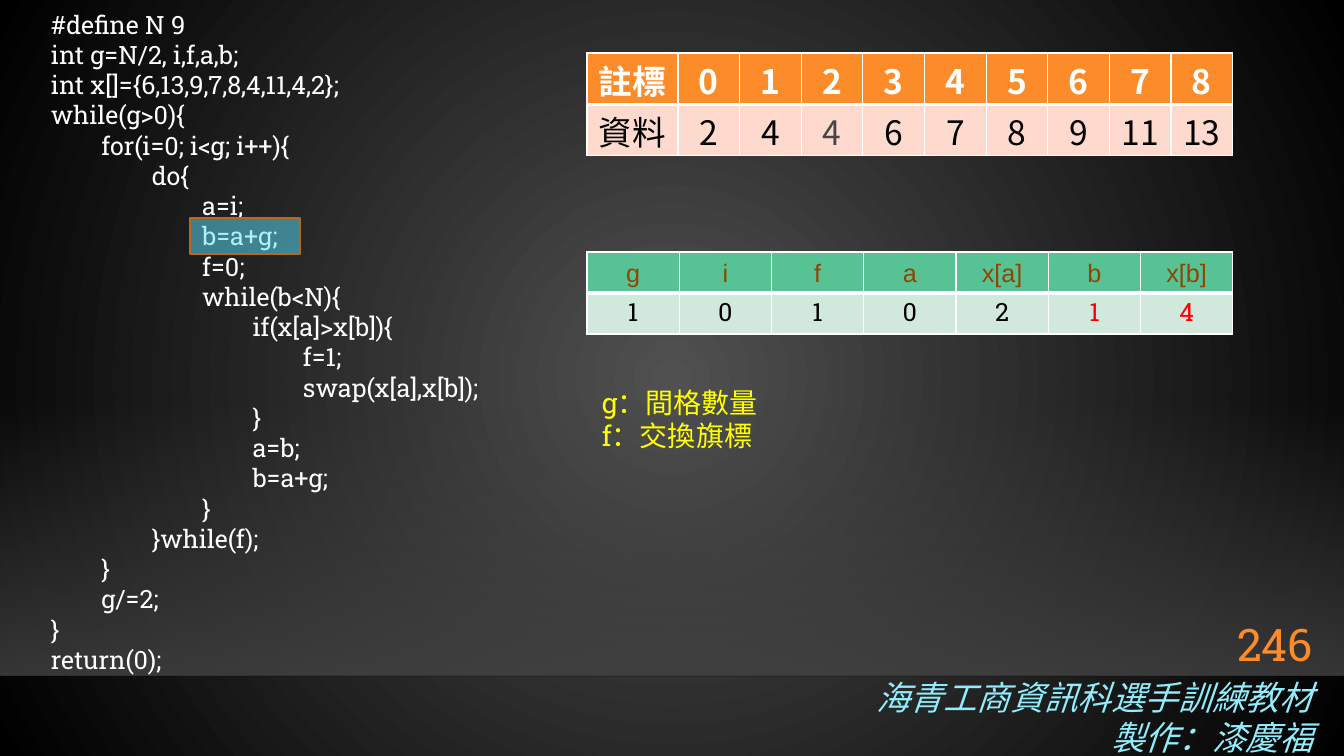
import pptx
import pptx.util
import pptx.dml.color
import pptx.enum.shapes
import pptx.enum.text
import pptx.oxml
import pptx.oxml.ns

SLAB = "Roboto Slab"
HAN = "Noto Sans CJK SC"
SANS = "Arial"
WHITE, BLACK, RED, ORANGE = "FFFFFF", "000000", "FF0000", "FB8C29"
ALIGN = pptx.enum.text.PP_ALIGN
ANCHOR = pptx.enum.text.MSO_ANCHOR
QN = pptx.oxml.ns.qn


def px(count):
    return pptx.util.Emu(round(count * 914400 / 100.8))


def color(code):
    return pptx.dml.color.RGBColor.from_string(code)


def element(tag, inner="", **attributes):
    listed = " ".join(f'{key}="{value}"' for key, value in attributes.items())
    return pptx.oxml.parse_xml(
        f'<a:{tag} {pptx.oxml.ns.nsdecls("a")} {listed}>{inner}</a:{tag}>')


def set_alpha(parent, percent):
    parent.find(".//" + QN("a:srgbClr")).append(element("alpha", val=percent * 1000))


def gradient(stops, direction):
    listed = "".join(
        f'<a:gs pos="{position * 1000}"><a:srgbClr val="{code}">'
        f'<a:alpha val="{alpha * 1000}"/></a:srgbClr></a:gs>'
        for position, code, alpha in stops)
    return element("gradFill", f"<a:gsLst>{listed}</a:gsLst>{direction}", rotWithShape=1)


class Page:
    def __init__(self, deck):
        self.slide = deck.slides.add_slide(deck.slide_layouts[6])
        self.shapes = self.slide.shapes

    def put_gradient(self, owner, stops, direction):
        holder = owner.find(".//" + QN("a:gradFill"))
        holder.getparent().replace(holder, gradient(stops, direction))

    def backdrop(self, center, edge):
        self.slide.background.fill.gradient()
        self.put_gradient(
            self.slide.element, [(0, center, 100), (100, edge, 100)],
            '<a:path path="circle"><a:fillToRect l="50000" t="50000" r="50000" b="50000"/></a:path>')

    def rectangle(self, box):
        shape = self.shapes.add_shape(
            pptx.enum.shapes.MSO_SHAPE.RECTANGLE, *map(px, box))
        shape.shadow.inherit = False
        return shape

    def floor(self, box, code):
        shape = self.rectangle(box)
        shape.line.fill.background()
        shape.fill.gradient()
        self.put_gradient(shape.element, [(0, code, 0), (100, code, 80)],
                          '<a:lin ang="5400000" scaled="0"/>')

    def highlight(self, box, fill, outline):
        shape = self.rectangle(box)
        shape.fill.solid()
        shape.fill.fore_color.rgb = color(fill)
        set_alpha(shape.element.spPr.find(QN("a:solidFill")), 50)
        shape.line.color.rgb = color(outline)
        shape.line.width = pptx.util.Pt(1.25)

    def horizon(self, y, width, code):
        line = self.shapes.add_connector(
            pptx.enum.shapes.MSO_CONNECTOR.STRAIGHT, 0, px(y), px(width), px(y))
        line.line.color.rgb = color(code)
        line.line.width = pptx.util.Pt(1)
        set_alpha(line.element.spPr, 20)
        line.element.spPr.append(element("effectLst"))

    def add_text(self, paragraph, text, size, font, code, align=ALIGN.LEFT,
                 bold=False, italic=False, spaced=True):
        paragraph.alignment = align
        if spaced:
            paragraph.line_spacing = pptx.util.Pt(size * 1.2)
        run = paragraph.add_run()
        run.text = text
        run.font.size = pptx.util.Pt(size)
        run.font.name = font
        run.font.bold = bold
        run.font.italic = italic
        run.font.color.rgb = color(code)
        run._r.find(".//" + QN("a:latin")).addnext(element("ea", typeface=HAN))

    def text(self, box, lines, *style, tab=0, **options):
        frame = self.shapes.add_textbox(*map(px, box)).text_frame
        frame.word_wrap = True
        frame.margin_left = frame.margin_right = px(10)
        frame.margin_top = frame.margin_bottom = px(5)
        for index, line in enumerate(lines):
            paragraph = frame.paragraphs[0] if index == 0 else frame.add_paragraph()
            self.add_text(paragraph, line, *style, **options)
            if tab:
                stops = "".join(f'<a:tab pos="{px(tab * (step + 1))}" algn="l"/>'
                                for step in range(6))
                paragraph._p.get_or_add_pPr().append(element("tabLst", stops))

    def border(self, cell, is_header):
        widths = {"lnL": 1, "lnR": 1, "lnT": 1 if is_header else 3,
                  "lnB": 3 if is_header else 1}
        properties = cell._tc.get_or_add_tcPr()
        for side, width in widths.items():
            properties.append(element(
                side, f'<a:solidFill><a:srgbClr val="{WHITE}"/></a:solidFill>',
                w=width * 12700))

    def table(self, box, columns, row_height, rows, fills, styles, marked, margins, anchor):
        grid = self.shapes.add_table(len(rows), len(columns), *map(px, box)).table
        for column, width in zip(grid.columns, columns):
            column.width = px(width)
        for r, values in enumerate(rows):
            grid.rows[r].height = px(row_height)
            for c, value in enumerate(values):
                cell = grid.cell(r, c)
                self.border(cell, r == 0)
                cell.fill.solid()
                cell.fill.fore_color.rgb = color(fills[r])
                cell.margin_left = cell.margin_right = px(5)
                cell.margin_top, cell.margin_bottom = map(px, margins)
                cell.vertical_anchor = anchor
                size, font, code, bold = styles[r]
                self.add_text(cell.text_frame.paragraphs[0], value, size, font,
                              marked.get((r, c), code), ALIGN.CENTER, bold)


CODE = [
    (0, "#define N 9"),
    (0, "int g=N/2, i,f,a,b;"),
    (0, "int x[]={6,13,9,7,8,4,11,4,2};"),
    (0, "while(g>0){"),
    (1, "for(i=0; i<g; i++){"),
    (2, "do{"),
    (3, "a=i;"),
    (3, "b=a+g;"),
    (3, "f=0;"),
    (3, "while(b<N){"),
    (4, "if(x[a]>x[b]){"),
    (5, "f=1;"),
    (5, "swap(x[a],x[b]);"),
    (4, "}"),
    (4, "a=b;"),
    (4, "b=a+g;"),
    (3, "}"),
    (2, "}while(f);"),
    (1, "}"),
    (1, "g/=2;"),
    (0, "}"),
    (0, "return(0);"),
]


def main():
    deck = pptx.Presentation()
    deck.slide_width, deck.slide_height = px(1344), px(756)
    page = Page(deck)
    page.backdrop("505050", BLACK)
    page.floor((0, 399, 1344, 277), "454545")
    page.horizon(676, 1344, "000001")
    page.text((861, 672, 462, 92), ["海青工商資訊科選手訓練教材", "製作：漆慶福"],
              24, HAN, "91EDFC", align=ALIGN.RIGHT, italic=True)
    page.text((1126, 612, 197, 55), ["246"], 32, SLAB, ORANGE,
              align=ALIGN.RIGHT, spaced=False)
    page.table((587, 53, 646, 102), [91] + [555 / 9] * 9, 51,
               [["註標"] + [str(index) for index in range(9)],
                ["資料", "2", "4", "4", "6", "7", "8", "9", "11", "13"]],
               [ORANGE, "FDDACD"],
               [(24, HAN, WHITE, True), (24, HAN, BLACK, False)],
               {(1, 3): "454545"}, (11, 0), ANCHOR.TOP)
    page.text((41, 4, 548, 682), ["\t" * depth + code for depth, code in CODE],
              18, SLAB, WHITE, tab=50.4)
    page.table((587, 252, 646, 82), [646 / 7] * 7, 41,
               [["g", "i", "f", "a", "x[a]", "b", "x[b]"],
                ["1", "0", "1", "0", "2", "1", "4"]],
               ["57C293", "D1E9DC"],
               [(18, SANS, "8F4503", False), (18, SLAB, BLACK, False)],
               {(1, 5): RED, (1, 6): RED}, (5, 5), ANCHOR.MIDDLE)
    page.text((592, 380, 179, 78), ["g：間格數量", "f：交換旗標"], 20, SLAB, "FFFF00")
    page.highlight((190, 218, 110, 36), "5AE4FB", "BA681E")
    deck.save("out.pptx")


if __name__ == "__main__":
    main()
